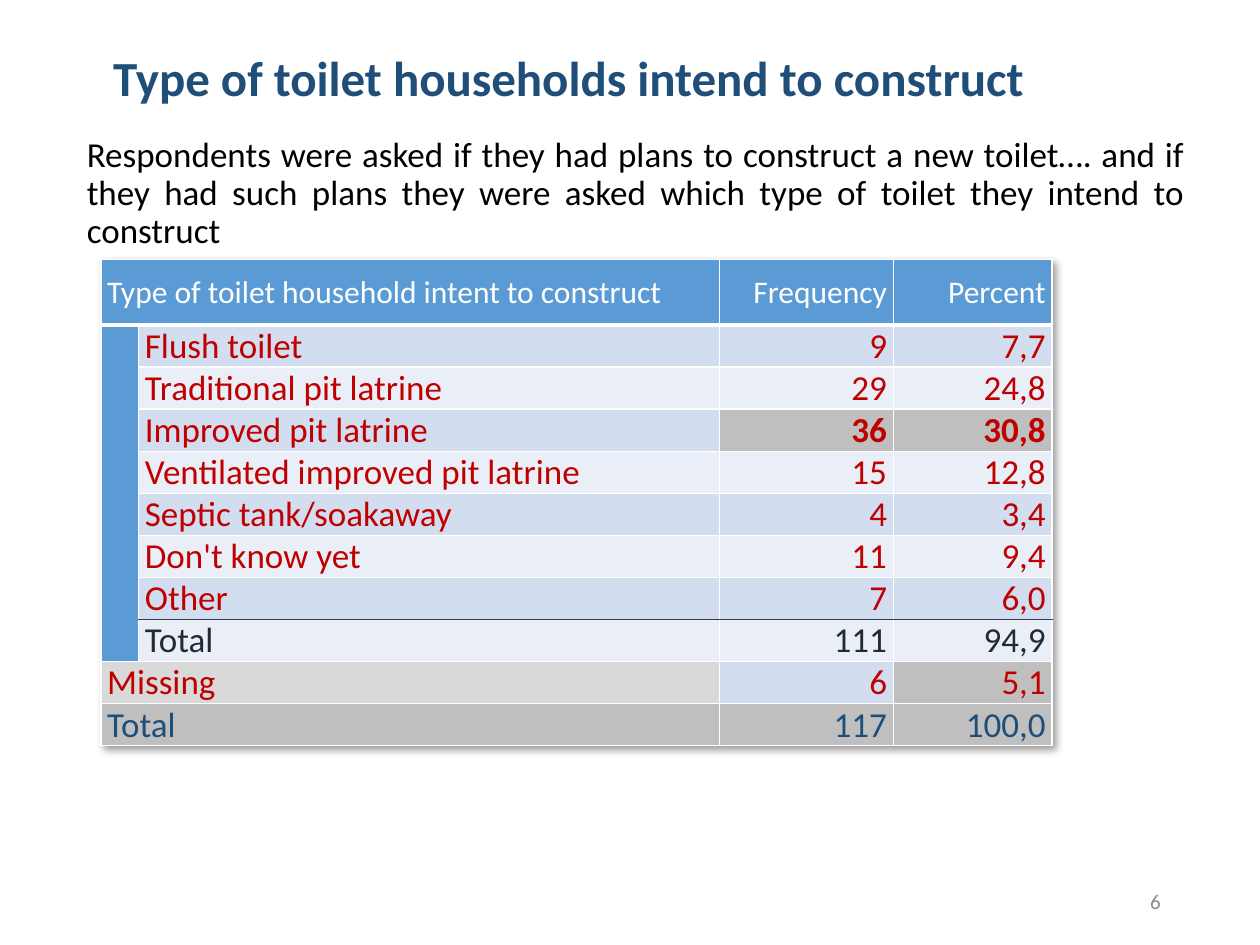
from dataclasses import dataclass

import lxml.etree
import pptx
import pptx.dml.color
import pptx.enum.text
import pptx.oxml
import pptx.oxml.ns
import pptx.util

RGBColor = pptx.dml.color.RGBColor
ALIGN = pptx.enum.text.PP_ALIGN
ANCHOR = pptx.enum.text.MSO_ANCHOR

WHITE = RGBColor(0xFF, 0xFF, 0xFF)
BLACK = RGBColor(0x00, 0x00, 0x00)
NAVY = RGBColor(0x1F, 0x4E, 0x79)
BLUE = RGBColor(0x5B, 0x9B, 0xD5)
BAND_DARK = RGBColor(0xD2, 0xDE, 0xEF)
BAND_LIGHT = RGBColor(0xEA, 0xEF, 0xF7)
GREY = RGBColor(0xBF, 0xBF, 0xBF)
LIGHT_GREY = RGBColor(0xD9, 0xD9, 0xD9)
NUMBER_GREY = RGBColor(0x8C, 0x8C, 0x8C)
RED = RGBColor(0xC0, 0x00, 0x00)
SLATE = RGBColor(0x22, 0x2A, 0x35)
RULE = RGBColor(0x33, 0x3F, 0x50)

FONT = "Calibri"
SLIDE_WIDTH = pptx.util.Inches(10)
SLIDE_HEIGHT = pptx.util.Inches(7.5)
COLUMN_SHARES = (3, 46.1, 13.8, 12.6)
HEADER_SHARE = 6.93
ROW_SHARE = 4.13
GROUP_FIRST, GROUP_LAST = 1, 8


@dataclass(frozen=True)
class Region:
    left: float
    top: float
    width: float
    height: float

    def lengths(self) -> tuple:
        return (across(self.left), down(self.top), across(self.width), down(self.height))


@dataclass(frozen=True)
class TextBlock:
    text: str
    region: Region
    size: int
    color: RGBColor
    align: ALIGN = ALIGN.LEFT
    anchor: ANCHOR = ANCHOR.MIDDLE
    bold: bool = False
    line_spacing: float = 0.9


@dataclass(frozen=True)
class TableRow:
    texts: tuple
    fills: tuple
    color: RGBColor = RED
    size: int = 20
    bold_numbers: bool = False
    top: RGBColor = WHITE
    bottom: RGBColor = WHITE
    bottom_width: float = 1


TEXT_BLOCKS = (
    TextBlock("Type of toilet households intend to construct",
              Region(8, 1.73, 90, 13.6), 28, NAVY, bold=True),
    TextBlock("Respondents were asked if they had plans to construct a new toilet…. and if "
              "they had such plans they were asked which type of toilet they intend to construct",
              Region(5.9, 13.87, 89.1, 75.07), 20, BLACK, ALIGN.JUSTIFY, ANCHOR.TOP),
    TextBlock("6", Region(70.6, 92.67, 22.5, 5.33), 12, NUMBER_GREY, ALIGN.RIGHT,
              line_spacing=1),
)

TABLE_REGION = Region(8, 27.47, 75.6, 51.33)
DARK_ROW = (BAND_DARK,) * 3
LIGHT_ROW = (BAND_LIGHT,) * 3
TABLE_ROWS = (
    TableRow(("Type of toilet household intent to construct", "Frequency", "Percent"),
             (BLUE,) * 3, WHITE, 18, bottom_width=3),
    TableRow(("Flush toilet", "9", "7,7"), DARK_ROW),
    TableRow(("Traditional pit latrine", "29", "24,8"), LIGHT_ROW),
    TableRow(("Improved pit latrine", "36", "30,8"), (BAND_DARK, GREY, GREY),
             bold_numbers=True),
    TableRow(("Ventilated improved pit latrine", "15", "12,8"), LIGHT_ROW),
    TableRow(("Septic tank/soakaway", "4", "3,4"), DARK_ROW),
    TableRow(("Don't know yet", "11", "9,4"), LIGHT_ROW),
    TableRow(("Other", "7", "6,0"), DARK_ROW, bottom=RULE),
    TableRow(("Total", "111", "94,9"), LIGHT_ROW, SLATE, top=RULE),
    TableRow(("Missing", "6", "5,1"), (LIGHT_GREY, BAND_DARK, GREY)),
    TableRow(("Total", "117", "100,0"), (GREY,) * 3, NAVY),
)


def across(share: float) -> int:
    return round(SLIDE_WIDTH * share / 100)


def down(share: float) -> int:
    return round(SLIDE_HEIGHT * share / 100)


def style_font(paragraph, size: int, color: RGBColor, bold: bool) -> None:
    paragraph.font.name = FONT
    paragraph.font.size = pptx.util.Pt(size)
    paragraph.font.bold = bold
    paragraph.font.color.rgb = color


def add_text_block(slide, block: TextBlock) -> None:
    frame = slide.shapes.add_textbox(*block.region.lengths()).text_frame
    frame.word_wrap = True
    frame.vertical_anchor = block.anchor
    paragraph = frame.paragraphs[0]
    paragraph.text = block.text
    paragraph.alignment = block.align
    paragraph.line_spacing = block.line_spacing
    style_font(paragraph, block.size, block.color, block.bold)


def add_border(cell, side: str, color: RGBColor, width: float) -> None:
    properties = cell._tc.get_or_add_tcPr()
    namespace = pptx.oxml.ns.nsdecls("a")
    properties.append(pptx.oxml.parse_xml(
        f'<a:{side} {namespace} w="{pptx.util.Pt(width)}"><a:solidFill>'
        f'<a:srgbClr val="{color}"/></a:solidFill></a:{side}>'))


def style_cell(cell, fill: RGBColor, row: TableRow) -> None:
    cell.margin_left = cell.margin_right = pptx.util.Inches(0.05)
    cell.margin_top = cell.margin_bottom = 0
    cell.vertical_anchor = ANCHOR.MIDDLE
    add_border(cell, "lnL", WHITE, 1)
    add_border(cell, "lnR", WHITE, 1)
    add_border(cell, "lnT", row.top, 1)
    add_border(cell, "lnB", row.bottom, row.bottom_width)
    cell.fill.solid()
    cell.fill.fore_color.rgb = fill


def write_cell(cell, text: str, row: TableRow, numeric: bool) -> None:
    paragraph = cell.text_frame.paragraphs[0]
    paragraph.text = text
    paragraph.alignment = ALIGN.RIGHT if numeric else ALIGN.LEFT
    style_font(paragraph, row.size, row.color, numeric and row.bold_numbers)


def add_table_shadow(table) -> None:
    table._tbl.tblPr.insert(0, pptx.oxml.parse_xml(
        f'<a:effectLst {pptx.oxml.ns.nsdecls("a")}>'
        '<a:outerShdw blurRad="50800" dist="38100" dir="2700000" algn="tl" rotWithShape="0">'
        '<a:srgbClr val="000000"><a:alpha val="40000"/></a:srgbClr>'
        '</a:outerShdw></a:effectLst>'))


def add_toilet_table(slide) -> None:
    table = slide.shapes.add_table(
        len(TABLE_ROWS), len(COLUMN_SHARES), *TABLE_REGION.lengths()).table
    add_table_shadow(table)
    for column, share in zip(table.columns, COLUMN_SHARES):
        column.width = across(share)
    for index, row in enumerate(TABLE_ROWS):
        table.rows[index].height = down(ROW_SHARE if index else HEADER_SHARE)
        grouped = GROUP_FIRST <= index <= GROUP_LAST
        group_row = TableRow((), ()) if grouped else row
        style_cell(table.cell(index, 0), BLUE if grouped else row.fills[0], group_row)
        for column, fill in enumerate(row.fills, start=1):
            style_cell(table.cell(index, column), fill, row)
        if not grouped:
            table.cell(index, 0).merge(table.cell(index, 1))
        for position, text in enumerate(row.texts):
            column = position + 1 if position or grouped else 0
            write_cell(table.cell(index, column), text, row, position > 0)
    table.cell(GROUP_FIRST, 0).merge(table.cell(GROUP_LAST, 0))


def main() -> None:
    presentation = pptx.Presentation()
    presentation.slide_width = SLIDE_WIDTH
    presentation.slide_height = SLIDE_HEIGHT
    slide = presentation.slides.add_slide(presentation.slide_layouts[6])
    for block in TEXT_BLOCKS:
        add_text_block(slide, block)
    add_toilet_table(slide)
    presentation.save("out.pptx")


if __name__ == "__main__":
    main()
